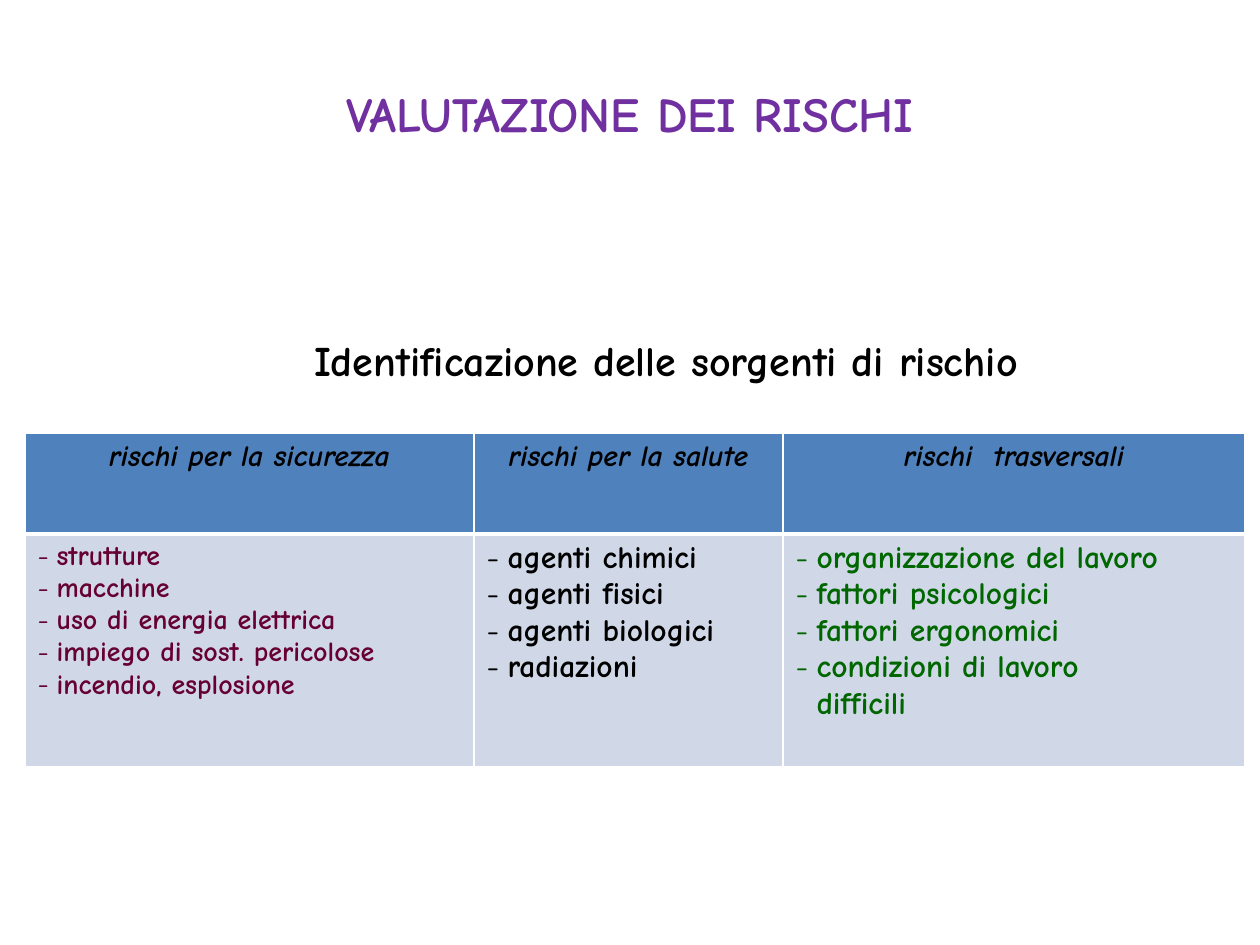
from pptx import Presentation
from pptx.dml.color import RGBColor
from pptx.enum.text import MSO_ANCHOR as ANCHOR, MSO_AUTO_SIZE as FIT, PP_ALIGN as ALIGN
from pptx.oxml.ns import qn
from pptx.util import Emu, Pt
from lxml.etree import SubElement

PX = 914400 // 126
FONT = "Comic Neue"
COLORS = {
    "title": "7030A0", "text": "000000", "safety": "660033", "cross": "006600",
    "header": "4F81BD", "body": "D0D8E8", "border": "FFFFFF",
}

# Heading, text size, colour, hanging indent in px, items
RISKS = [
    ("rischi per la sicurezza", 16, "safety", 19,
     ["strutture", "macchine", "uso di energia elettrica",
      "impiego di sost. pericolose", "incendio, esplosione"]),
    ("rischi per la salute", 18, "text", 21,
     ["agenti chimici", "agenti fisici", "agenti biologici", "radiazioni"]),
    ("rischi  trasversali", 18, "cross", 21,
     ["organizzazione del lavoro", "fattori psicologici", "fattori ergonomici",
      "condizioni di lavoro\vdifficili"]),
]


def px(n):
    return Emu(n * PX)


def rgb(name):
    return RGBColor.from_string(COLORS[name])


def write(p, text, size, color, align=ALIGN.LEFT, italic=False):
    p.text = text
    p.alignment = align
    p.space_before = Pt(0)
    for r in p.runs:
        style = {"name": FONT, "size": Pt(size), "bold": True, "italic": italic}
        for key, value in style.items():
            setattr(r.font, key, value)
        r.font.color.rgb = rgb(color)


def add_dash(p, indent):
    pPr = p._p.get_or_add_pPr()
    pPr.set("marL", str(px(indent)))
    pPr.set("indent", str(-px(indent)))
    SubElement(pPr, qn("a:buFont"), typeface=FONT)
    SubElement(pPr, qn("a:buChar"), char="-")


def set_borders(cell, **widths):
    tcPr = cell._tc.get_or_add_tcPr()
    for i, side in enumerate("LRTB"):
        ln = SubElement(tcPr, qn("a:ln" + side), w=str(Pt(widths.get(side, 1))))
        fill = SubElement(ln, qn("a:solidFill"))
        SubElement(fill, qn("a:srgbClr"), val=COLORS["border"])
        tcPr.insert(i, ln)


def place_heading(sp, box, text, size, color, top_inset):
    sp.left, sp.top, sp.width, sp.height = map(px, box)
    tf = sp.text_frame
    tf.word_wrap = True
    tf.auto_size = FIT.NONE
    tf.vertical_anchor = ANCHOR.TOP
    tf.margin_top = px(top_inset)
    write(tf.paragraphs[0], text, size, color, ALIGN.CENTER)


def add_risk_table(slide, box, widths, heights):
    table = slide.shapes.add_table(2, len(RISKS), *map(px, box)).table
    for col, width in zip(table.columns, widths):
        col.width = px(width)
    for row, height in zip(table.rows, heights):
        row.height = px(height)
    for c, (heading, size, color, indent, items) in enumerate(RISKS):
        head, body = table.cell(0, c), table.cell(1, c)
        for cell, fill in ((head, "header"), (body, "body")):
            cell.fill.solid()
            cell.fill.fore_color.rgb = rgb(fill)
        set_borders(head, B=3)
        set_borders(body, T=3)
        write(head.text_frame.paragraphs[0], heading, 17, "text", ALIGN.CENTER, italic=True)
        tf = body.text_frame
        for i, item in enumerate(items):
            p = tf.add_paragraph() if i else tf.paragraphs[0]
            write(p, item, size, color)
            add_dash(p, indent)


def main():
    prs = Presentation()
    prs.slide_width, prs.slide_height = px(1260), px(945)
    slide = prs.slides.add_slide(prs.slide_layouts[5])

    # Title and subtitle
    place_heading(slide.shapes.title, (63, 38, 1134, 87),
                  "VALUTAZIONE DEI RISCHI", 28, "title", 46)
    subtitle = slide.shapes.add_textbox(0, 0, px(1), px(1))
    place_heading(subtitle, (116, 325, 1100, 583),
                  "Identificazione delle sorgenti di rischio", 24, "text", 10)

    # Risk sources
    widths, heights = (449, 309, 462), (101, 233)
    add_risk_table(slide, (25, 433, sum(widths), sum(heights)), widths, heights)

    prs.save("out.pptx")


if __name__ == "__main__":
    main()
